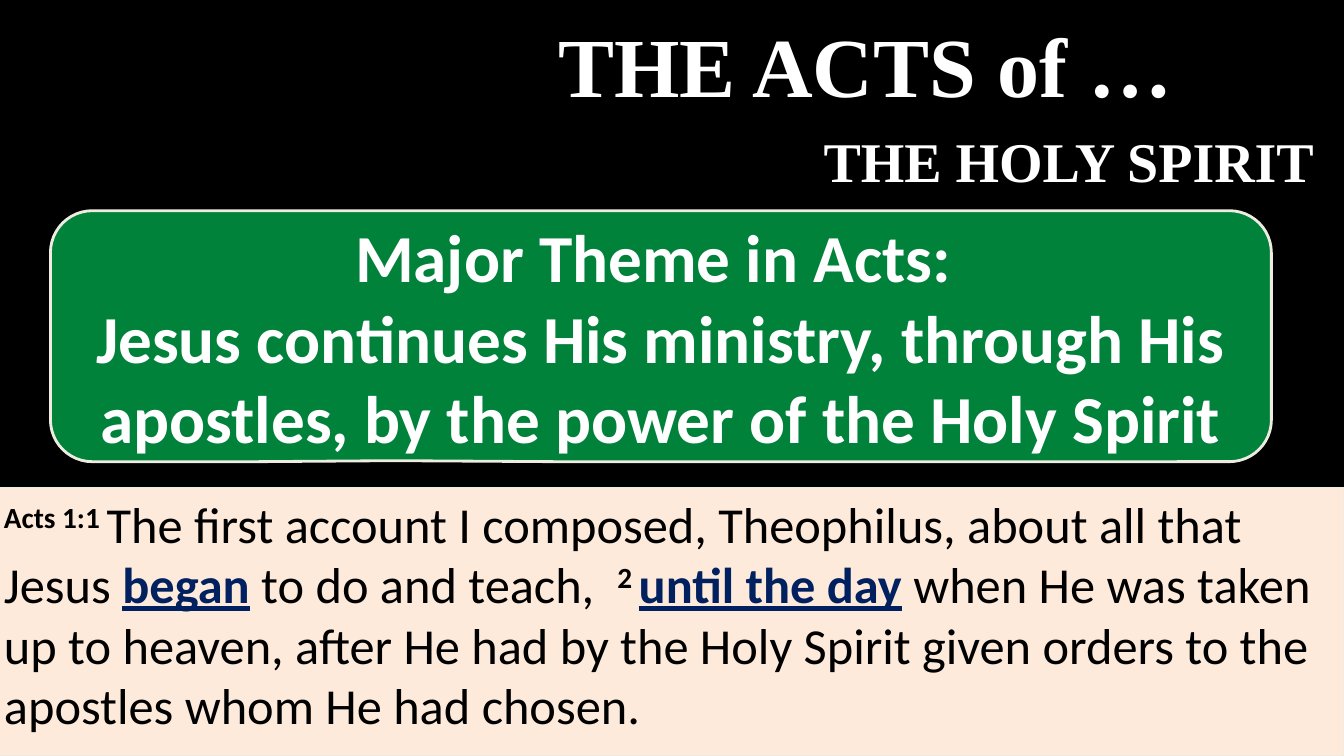
import pptx
import pptx.util
import pptx.dml.color
import pptx.enum.shapes
import pptx.enum.text
import pptx.oxml
import pptx.oxml.ns
from dataclasses import dataclass

Inches = pptx.util.Inches
ALIGN = pptx.enum.text.PP_ALIGN
ANCHOR = pptx.enum.text.MSO_ANCHOR
SHAPES = pptx.enum.shapes.MSO_SHAPE

TITLE = "THE ACTS of …"
SUBTITLE = "THE HOLY SPIRIT"
THEME_LINES = [
    "Major Theme in Acts: ",
    "Jesus continues His ministry, through His apostles, by the power of the Holy Spirit",
]
# Each piece of the passage is (text, role).
PASSAGE = [
    ("Acts 1:1 ", "verse"),
    ("The first account I composed, Theophilus, about all that Jesus ", "plain"),
    ("began", "key"),
    (" to do and teach,  ", "plain"),
    ("2 ", "verse"),
    ("until the day", "key"),
    (" when He was taken up to heaven, after He had by the Holy Spirit given orders to "
     "the apostles whom He had chosen.", "plain"),
]

TITLE_BOX = (5.17, -0.08, 6.83, 1.42)
SUBTITLE_BOX = (8, 1.17, 5.2, 0.83)
THEME_BOX = (0.5, 2.09, 12.11, 2.49)
PASSAGE_BOX = (-0.06, 4.84, 13.39, 2.66)
CALLOUT_ADJUSTMENTS = (-0.219, 0.496, 0.167)


@dataclass(frozen=True)
class Theme:
    background: str = "000000"
    light: str = "FFFFFF"
    dark: str = "000000"
    key: str = "002060"
    green: str = "00823B"
    cream: str = "FDEADA"
    outline: str = "EEECE1"
    heading_font: str = "Times New Roman"
    body_font: str = "Calibri"
    title_size: int = 60
    subtitle_size: int = 40
    theme_size: int = 48
    passage_size: int = 36


THEME = Theme()
ROLES = {
    "verse": dict(color=THEME.dark, bold=True, baseline=30000),
    "plain": dict(color=THEME.dark, bold=False),
    "key": dict(color=THEME.key, bold=True, underline=True),
}


def rgb(value):
    return pptx.dml.color.RGBColor.from_string(value)


def add_text(paragraph, text, *, size, font, color, bold=True, underline=False, baseline=0):
    """Append a run; baseline is its rise in thousandths of a percent."""
    run = paragraph.add_run()
    run.text = text
    run.font.size = pptx.util.Pt(size)
    run.font.name = font
    run.font.color.rgb = rgb(color)
    run.font.bold = bold
    run.font.underline = underline
    if baseline:
        run.font._element.set("baseline", str(baseline))


def prepare_frame(shape, anchor):
    frame = shape.text_frame
    frame.word_wrap = True
    frame.auto_size = pptx.enum.text.MSO_AUTO_SIZE.NONE
    frame.vertical_anchor = anchor
    return frame


def make_callout(placeholder):
    """Give a placeholder the rounded callout outline that the theme panel has."""
    guides = "".join(
        f'<a:gd name="adj{number}" fmla="val {round(value * 100000)}"/>'
        for number, value in enumerate(CALLOUT_ADJUSTMENTS, 1))
    geometry = pptx.oxml.parse_xml(
        f'<a:prstGeom {pptx.oxml.ns.nsdecls("a")} prst="wedgeRoundRectCallout">'
        f"<a:avLst>{guides}</a:avLst></a:prstGeom>")
    placeholder._element.spPr.find(pptx.oxml.ns.qn("a:xfrm")).addnext(geometry)


def fill_heading(placeholder, box, text, size):
    placeholder.left, placeholder.top, placeholder.width, placeholder.height = map(Inches, box)
    make_callout(placeholder)
    placeholder.fill.background()
    placeholder.line.fill.background()
    paragraph = prepare_frame(placeholder, ANCHOR.MIDDLE).paragraphs[0]
    paragraph.alignment = ALIGN.CENTER
    paragraph.space_before = pptx.util.Pt(0)
    add_text(paragraph, text, size=size, font=THEME.heading_font, color=THEME.light)


def add_panel(slide, kind, box, fill, line_width):
    panel = slide.shapes.add_shape(kind, *map(Inches, box))
    panel.shadow.inherit = False
    panel.fill.solid()
    panel.fill.fore_color.rgb = rgb(fill)
    panel.line.color.rgb = rgb(THEME.outline)
    panel.line.width = pptx.util.Pt(line_width)
    return panel


def main():
    deck = pptx.Presentation()
    deck.slide_width, deck.slide_height = Inches(13.33), Inches(7.5)
    slide = deck.slides.add_slide(deck.slide_layouts[0])
    slide.background.fill.solid()
    slide.background.fill.fore_color.rgb = rgb(THEME.background)

    passage = add_panel(slide, SHAPES.RECTANGLE, PASSAGE_BOX, THEME.cream, 0.75)
    slide.shapes.title._element.addprevious(passage._element)
    paragraph = prepare_frame(passage, ANCHOR.TOP).paragraphs[0]
    paragraph.alignment = ALIGN.LEFT
    for text, role in PASSAGE:
        add_text(paragraph, text, size=THEME.passage_size, font=THEME.body_font, **ROLES[role])

    fill_heading(slide.shapes.title, TITLE_BOX, TITLE, THEME.title_size)
    fill_heading(slide.placeholders[1], SUBTITLE_BOX, SUBTITLE, THEME.subtitle_size)

    major_theme = add_panel(slide, SHAPES.ROUNDED_RECTANGULAR_CALLOUT, THEME_BOX, THEME.green, 2)
    for index, value in enumerate(CALLOUT_ADJUSTMENTS):
        major_theme.adjustments[index] = value
    frame = prepare_frame(major_theme, ANCHOR.MIDDLE)
    for index, line in enumerate(THEME_LINES):
        paragraph = frame.add_paragraph() if index else frame.paragraphs[0]
        paragraph.alignment = ALIGN.CENTER
        add_text(paragraph, line, size=THEME.theme_size, font=THEME.body_font, color=THEME.light)

    deck.save("out.pptx")


if __name__ == "__main__":
    main()
